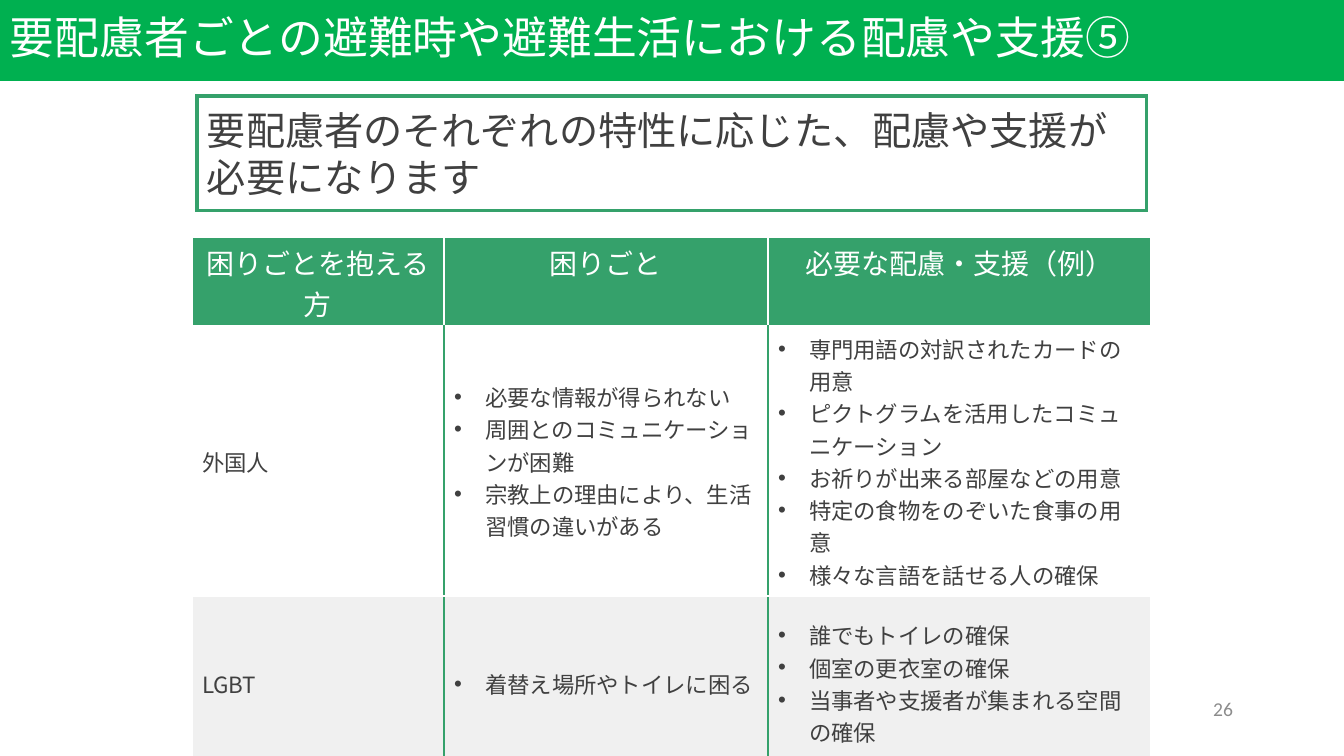
from lxml.etree import SubElement
from pptx import Presentation
from pptx.dml.color import RGBColor
from pptx.enum.shapes import MSO_SHAPE as Shape
from pptx.enum.text import MSO_ANCHOR as Anchor, PP_ALIGN as Align
from pptx.oxml import parse_xml
from pptx.oxml.ns import nsdecls, qn
from pptx.util import Pt

EMU_PER_PX = 914400 / 100.8
JAPANESE_FONT = "Noto Sans CJK JP"
WHITE = RGBColor(0xFF, 0xFF, 0xFF)
BANNER_GREEN = RGBColor(0x00, 0xB0, 0x50)
TABLE_GREEN = RGBColor(0x35, 0xA1, 0x6B)
BAND_GRAY = RGBColor(0xF0, 0xF0, 0xF0)
TEXT_GRAY = RGBColor(0x40, 0x40, 0x40)
NUMBER_GRAY = RGBColor(0x8C, 0x8C, 0x8C)

COLUMN_WIDTHS = (252, 324, 383)
ROW_HEIGHTS = (90, 269, 175)
BULLET_INDENT = 31
HEADINGS = ("困りごとを抱える方", "困りごと", "必要な配慮・支援（例）")
NEEDS = (
    (
        "外国人",
        (
            "必要な情報が得られない",
            "周囲とのコミュニケーションが困難",
            "宗教上の理由により、生活習慣の違いがある",
        ),
        (
            "専門用語の対訳されたカードの用意",
            "ピクトグラムを活用したコミュニケーション",
            "お祈りが出来る部屋などの用意",
            "特定の食物をのぞいた食事の用意",
            "様々な言語を話せる人の確保",
        ),
    ),
    (
        "LGBT",
        ("着替え場所やトイレに困る",),
        (
            "誰でもトイレの確保",
            "個室の更衣室の確保",
            "当事者や支援者が集まれる空間の確保",
        ),
    ),
)


def px(length):
    return round(length * EMU_PER_PX)


def box(left, top, width, height):
    return [px(length) for length in (left, top, width, height)]


def write(frame, lines, size, color, align=Align.LEFT, font_name=JAPANESE_FONT, bulleted=False):
    """Fill a text frame with one paragraph per line."""
    frame.word_wrap = True
    frame.text = "\n".join(lines)
    for paragraph in frame.paragraphs:
        paragraph.alignment = align
        properties = paragraph._p.get_or_add_pPr()
        if bulleted:
            properties.set("marL", str(px(BULLET_INDENT)))
            properties.set("indent", str(-px(BULLET_INDENT)))
            SubElement(properties, qn("a:buFont"), typeface="Arial")
            SubElement(properties, qn("a:buChar"), char="•")
        paragraph.font.size = Pt(size)
        paragraph.font.color.rgb = color
        paragraph.font.name = font_name
        SubElement(properties.find(qn("a:defRPr")), qn("a:ea"), typeface=font_name)


def add_panel(slide, bounds, fill, text, size, color, outline=None):
    panel = slide.shapes.add_shape(Shape.RECTANGLE, *box(*bounds))
    panel.shadow.inherit = False
    panel.fill.solid()
    panel.fill.fore_color.rgb = fill
    if outline is None:
        panel.line.fill.background()
    else:
        panel.line.color.rgb = outline
        panel.line.width = Pt(2.25)
        SubElement(panel._element.spPr.find(qn("a:ln")), qn("a:miter"), lim="800000")
    panel.text_frame.vertical_anchor = Anchor.MIDDLE
    write(panel.text_frame, [text], size, color)
    return panel


def add_page_number(slide, bounds, number):
    label = slide.shapes.add_textbox(*box(*bounds))
    label.text_frame.vertical_anchor = Anchor.MIDDLE
    write(label.text_frame, [number], 14, NUMBER_GRAY, Align.RIGHT, "Calibri")


def style_cell(cell, fill, left=WHITE, right=WHITE, bottom_width=1):
    """Set the fill and the four borders of a table cell."""
    cell.fill.solid()
    cell.fill.fore_color.rgb = fill
    borders = (("L", left, 1), ("R", right, 1), ("T", WHITE, 1), ("B", WHITE, bottom_width))
    for position, (side, color, width) in enumerate(borders):
        border = parse_xml(
            f'<a:ln{side} {nsdecls("a")} w="{Pt(width)}"><a:solidFill>'
            f'<a:srgbClr val="{color}"/></a:solidFill></a:ln{side}>'
        )
        cell._tc.get_or_add_tcPr().insert(position, border)


def add_needs_table(slide, left, top):
    bounds = box(left, top, sum(COLUMN_WIDTHS), sum(ROW_HEIGHTS))
    table = slide.shapes.add_table(len(ROW_HEIGHTS), len(COLUMN_WIDTHS), *bounds).table
    for column, width in zip(table.columns, COLUMN_WIDTHS):
        column.width = px(width)
    for row, height in zip(table.rows, ROW_HEIGHTS):
        row.height = px(height)

    for column, heading in enumerate(HEADINGS):
        cell = table.cell(0, column)
        write(cell.text_frame, [heading], 20, WHITE, Align.CENTER)
        style_cell(cell, TABLE_GREEN, bottom_width=3)

    last = len(COLUMN_WIDTHS) - 1
    for row, (person, troubles, supports) in enumerate(NEEDS, start=1):
        for column, lines in enumerate(([person], troubles, supports)):
            cell = table.cell(row, column)
            cell.vertical_anchor = Anchor.MIDDLE
            write(cell.text_frame, lines, 16, TEXT_GRAY, bulleted=column > 0)
            style_cell(
                cell,
                WHITE if row % 2 else BAND_GRAY,
                left=TABLE_GREEN if column > 0 else WHITE,
                right=TABLE_GREEN if column < last else WHITE,
            )


def main():
    presentation = Presentation()
    presentation.slide_width = px(1344)
    presentation.slide_height = px(756)
    slide = presentation.slides.add_slide(presentation.slide_layouts[6])

    title = add_panel(
        slide, (0, -2, 1344, 83), BANNER_GREEN,
        "要配慮者ごとの避難時や避難生活における配慮や支援⑤", 32, WHITE,
    )
    title.text_frame.paragraphs[0].line_spacing = 0.9
    add_page_number(slide, (1016, 689, 227, 40), "26")
    add_panel(
        slide, (197, 96, 950, 115), WHITE,
        "要配慮者のそれぞれの特性に応じた、配慮や支援が必要になります", 28, TEXT_GRAY, TABLE_GREEN,
    )
    add_needs_table(slide, 192, 237)
    presentation.save("out.pptx")


if __name__ == "__main__":
    main()
